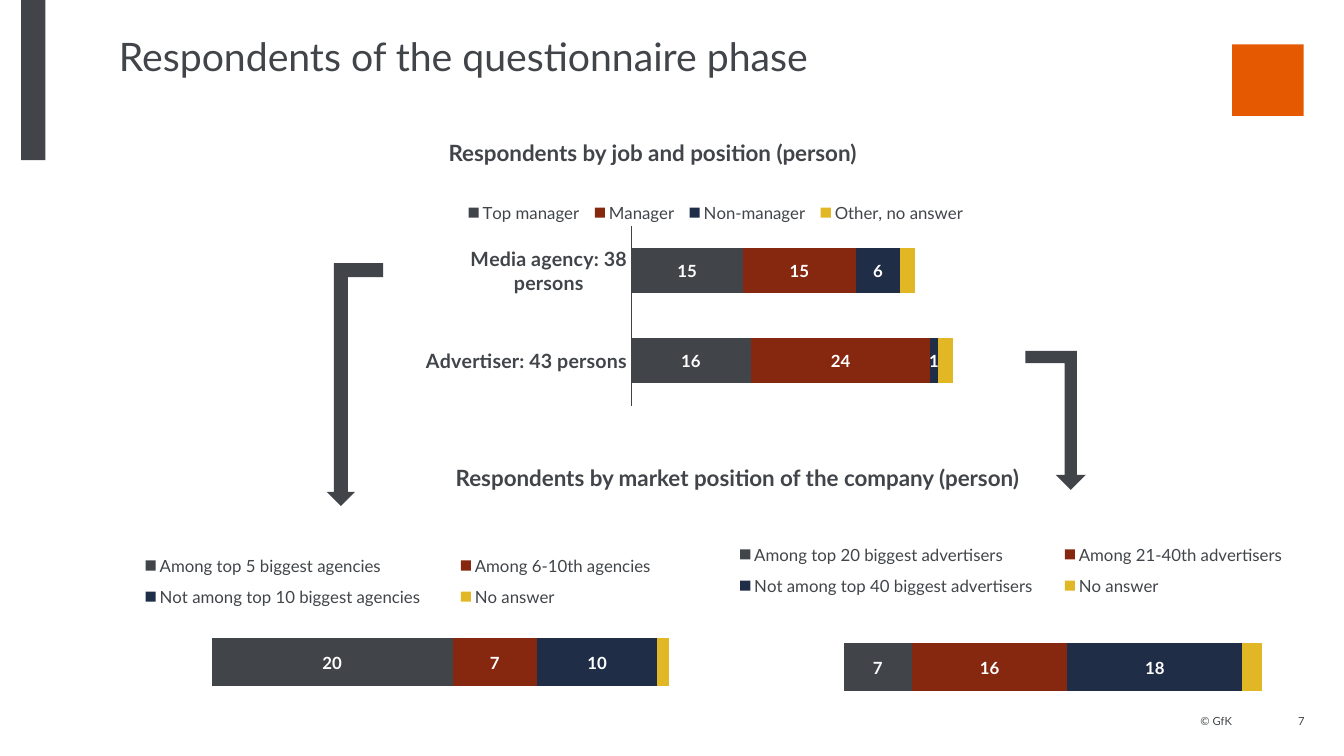
from lxml import etree
from pptx import Presentation
from pptx.chart.data import CategoryChartData
from pptx.dml.color import RGBColor
from pptx.enum import chart as ch, shapes, text
from pptx.oxml import ns
from pptx.util import Inches, Pt

THEME = {
    "font": "Lato", "ink": "414549", "light": "FFFFFF", "logo": "E55A00",
    "series": ["414549", "85280F", "202D46", "E2B726"],
    "title": 28, "heading": 16, "category": 14, "legend": 12, "label": 12,
    "chart": 11, "footer": 8,
}

TITLE = "Respondents of the questionnaire phase"
HEADINGS = [
    ("Respondents by job and position (person)", (4.45, 1.31, 6.86, 0.59)),
    ("Respondents by market position of the company (person)", (4.52, 4.54, 5.65, 0.32)),
]
# Plot and legend boxes are slide positions in inches, like the chart frames.
CHARTS = [
    {"frame": (4, 1.68, 5.97, 2.35), "plot": (6.26, 2.24, 3.71, 1.79),
     "legend": (4.55, 1.97, 5.1, 0.28), "max": 50, "show_categories": True,
     "categories": ["Media agency: 38 persons", "Advertiser: 43 persons"],
     "series": [("Top manager", [15, 16]), ("Manager", [15, 24]),
                ("Non-manager", [6, 1]), ("Other, no answer", [2, 2])]},
    {"frame": (0.73, 5.04, 6.15, 2), "plot": (2.1, 6.1, 4.78, 0.94),
     "legend": (1.1, 5.4, 5.7, 0.73), "max": 40, "show_categories": False,
     "categories": ["1"],
     "series": [("Among top 5 biggest agencies", [20]), ("Among 6-10th agencies", [7]),
                ("Not among top 10 biggest agencies", [10]), ("No answer", [1])]},
    {"frame": (6.73, 5.09, 6.47, 2), "plot": (8.37, 6.15, 4.82, 0.94),
     "legend": (7.08, 5.29, 5.9, 0.73), "max": 50, "show_categories": False,
     "categories": ["1"],
     "series": [("Among top 20 biggest advertisers", [7]), ("Among 21-40th advertisers", [16]),
                ("Not among top 40 biggest advertisers", [18]), ("No answer", [2])]},
]
AGENCY_ARROW = (3.24, 2.61, 0.56, 2.41)
ADVERTISER_ARROW = (10.17, 3.48, 0.6, 1.38)
SIDE_BAR = (0.21, 0, 0.24, 1.59)
LOGO_SQUARE = (12.22, 0.44, 0.71, 0.71)
COPYRIGHT = ("© GfK", (11.67, 7.07, 0.55, 0.15))
PAGE_NUMBER = ("7", (12.23, 7.07, 0.71, 0.15))


def inches(box):
    return [Inches(length) for length in box]


def style_font(font, size, color=THEME["ink"], bold=False):
    for name, value in {"name": THEME["font"], "size": Pt(size), "bold": bold}.items():
        setattr(font, name, value)
    font.color.rgb = RGBColor.from_string(color)


def write(frame, words, size, bold=False, **paragraph_format):
    for name in ("margin_left", "margin_top", "margin_right", "margin_bottom"):
        setattr(frame, name, 0)
    frame.word_wrap = True
    paragraph = frame.paragraphs[0]
    run = paragraph.add_run()
    run.text = words
    style_font(run.font, size, bold=bold)
    for name, value in paragraph_format.items():
        setattr(paragraph, name, value)


def add_text(slide, words, box, size, anchor=text.MSO_ANCHOR.TOP, **options):
    frame = slide.shapes.add_textbox(*inches(box)).text_frame
    write(frame, words, size, **options)
    frame.vertical_anchor = anchor
    return frame


def add_block(slide, kind, box, color):
    block = slide.shapes.add_shape(kind, *inches(box))
    block.shadow.inherit = False
    block.fill.solid()
    block.fill.fore_color.rgb = RGBColor.from_string(color)
    block.line.fill.background()
    return block


def lay_out(part, box, frame, index, inner=False):
    """Fix a chart part at a slide position, stored as fractions of the chart frame."""
    for old in part.findall(ns.qn("c:layout")):
        part.remove(old)
    layout = etree.Element(ns.qn("c:layout"))
    manual = etree.SubElement(layout, ns.qn("c:manualLayout"))
    left, top, width, height = frame
    values = {"xMode": "edge", "yMode": "edge",
              "x": (box[0] - left) / width, "y": (box[1] - top) / height,
              "w": box[2] / width, "h": box[3] / height}
    if inner:
        values = {"layoutTarget": "inner", **values}
    for name, value in values.items():
        etree.SubElement(manual, ns.qn(f"c:{name}")).set("val", str(value))
    part.insert(index, layout)


def add_stacked_chart(slide, content):
    data = CategoryChartData()
    data.categories = content["categories"]
    for name, values in content["series"]:
        data.add_series(name, values)
    chart = slide.shapes.add_chart(
        ch.XL_CHART_TYPE.BAR_STACKED, *inches(content["frame"]), data).chart
    style_font(chart.font, THEME["chart"])
    chart.has_title = False

    plot = chart.plots[0]
    for name, value in {"gap_width": 100, "overlap": 100, "vary_by_categories": False}.items():
        setattr(plot, name, value)
    for series, color in zip(plot.series, THEME["series"]):
        series.format.fill.solid()
        series.format.fill.fore_color.rgb = RGBColor.from_string(color)
    for series in list(plot.series)[:-1]:
        labels = series.data_labels
        style_font(labels.font, THEME["label"], THEME["light"], bold=True)
        for name, value in {"show_value": True, "number_format": "###0",
                            "number_format_is_linked": False,
                            "position": ch.XL_LABEL_POSITION.CENTER}.items():
            setattr(labels, name, value)

    scale, categories = chart.value_axis, chart.category_axis
    for name, value in {"minimum_scale": 0, "maximum_scale": content["max"],
                        "has_major_gridlines": False, "visible": False}.items():
        setattr(scale, name, value)
    for name, value in {"reverse_order": True, "visible": content["show_categories"],
                        "major_tick_mark": ch.XL_TICK_MARK.NONE}.items():
        setattr(categories, name, value)
    style_font(categories.tick_labels.font, THEME["category"], bold=True)
    categories.format.line.color.rgb = RGBColor.from_string(THEME["ink"])
    categories.format.line.width = Pt(0.75)

    chart.has_legend = True
    legend = chart.legend
    legend.position = ch.XL_LEGEND_POSITION.RIGHT
    legend.include_in_layout = False
    style_font(legend.font, THEME["legend"])
    lay_out(legend._element, content["legend"], content["frame"], 1)
    plot_area = chart._chartSpace.chart.plotArea
    lay_out(plot_area, content["plot"], content["frame"], 0, inner=True)


def main():
    deck = Presentation()
    deck.slide_width, deck.slide_height = inches((13.33, 7.5))
    slide = deck.slides.add_slide(deck.slide_layouts[5])

    add_block(slide, shapes.MSO_SHAPE.RECTANGLE, SIDE_BAR, THEME["ink"])
    add_block(slide, shapes.MSO_SHAPE.RECTANGLE, LOGO_SQUARE, THEME["logo"])

    title = slide.shapes.title
    title.left, title.top, title.width, title.height = inches((1.18, 0.32, 7.25, 0.71))
    write(title.text_frame, TITLE, THEME["title"], alignment=text.PP_ALIGN.LEFT)
    title.text_frame.vertical_anchor = text.MSO_ANCHOR.TOP

    for words, box in HEADINGS:
        add_text(slide, words, box, THEME["heading"], bold=True, line_spacing=1.25)
    for content in CHARTS:
        add_stacked_chart(slide, content)

    agency, advertiser = [
        add_block(slide, shapes.MSO_SHAPE.BENT_UP_ARROW, box, THEME["ink"])
        for box in (AGENCY_ARROW, ADVERTISER_ARROW)]
    agency.rotation = advertiser.rotation = 180
    advertiser.adjustments[0] = 0.205
    advertiser._element.spPr.xfrm.set("flipH", "1")

    footer = {"size": THEME["footer"], "anchor": text.MSO_ANCHOR.BOTTOM,
              "alignment": text.PP_ALIGN.RIGHT}
    add_text(slide, *COPYRIGHT, line_spacing=1.25, **footer)
    add_text(slide, *PAGE_NUMBER, **footer)
    deck.save("out.pptx")


if __name__ == "__main__":
    main()
